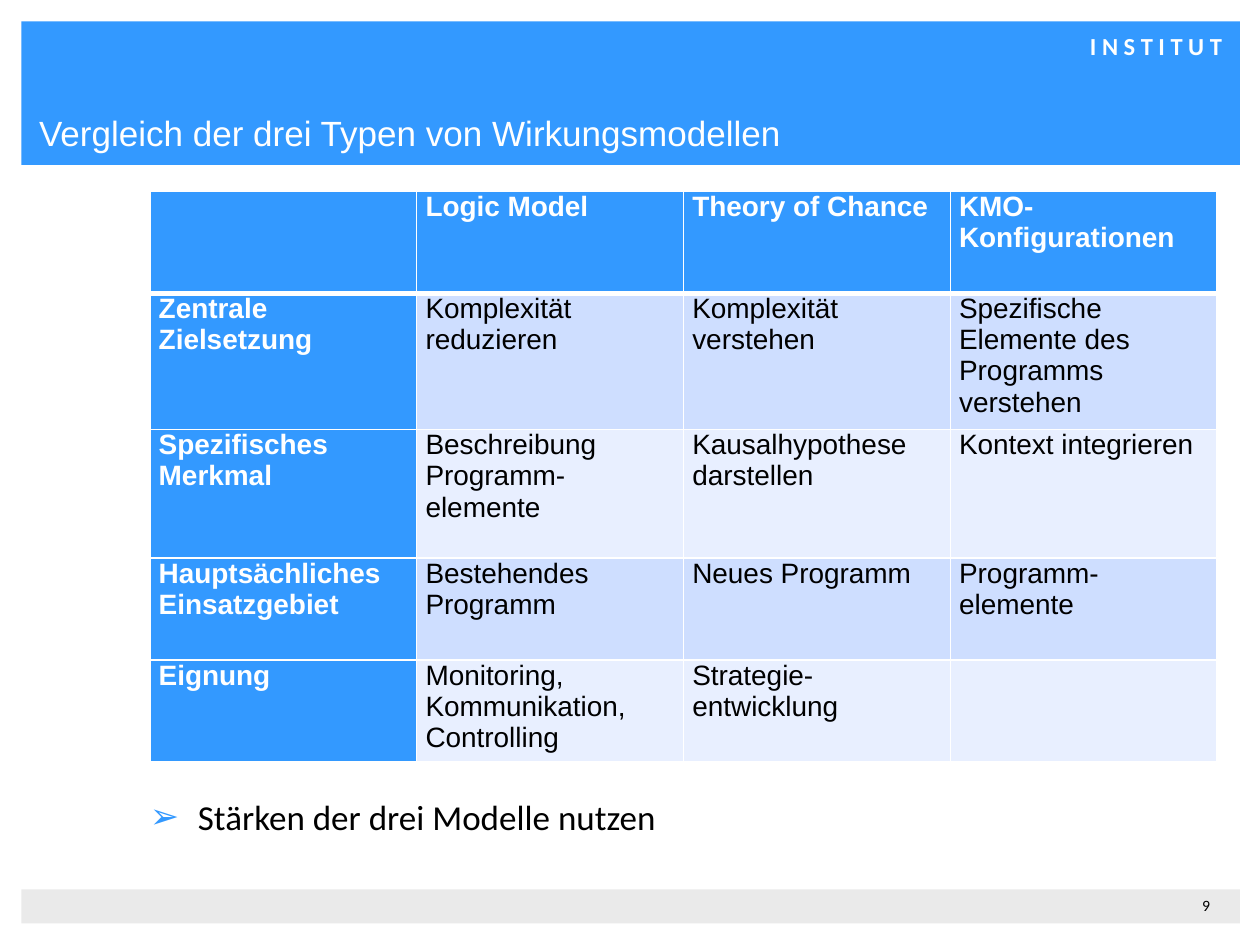
from typing import NamedTuple

from lxml import etree
from pptx import Presentation
from pptx import util as u
from pptx.dml.color import RGBColor
from pptx.enum import shapes, text
from pptx.oxml.ns import qn

PX = 9144  # EMU per px, 100 px to the inch

BLUE = RGBColor(0x33, 0x99, 0xFF)
PALE_BLUE = RGBColor(0xCE, 0xDE, 0xFF)
PALEST_BLUE = RGBColor(0xE8, 0xEF, 0xFF)
GREY = RGBColor(0xEA, 0xEA, 0xEA)
WHITE = RGBColor(0xFF, 0xFF, 0xFF)
BLACK = RGBColor(0x00, 0x00, 0x00)


class Box(NamedTuple):
    left: int
    top: int
    width: int
    height: int

    def emu(self) -> list[int]:
        return [value * PX for value in self]


class Style(NamedTuple):
    size: int
    font: str
    color: RGBColor
    bold: bool = False


class Band(NamedTuple):
    box: Box
    color: RGBColor


class Label(NamedTuple):
    box: Box
    wording: str
    style: Style
    align: text.PP_ALIGN


BANDS = [
    Band(Box(17, 17, 967, 114), BLUE),
    Band(Box(17, 706, 967, 27), GREY),
]
LABELS = [
    Label(Box(728, 25, 242, 24), "I N S T I T U T",
          Style(14, "Calibri", WHITE, True), text.PP_ALIGN.RIGHT),
    Label(Box(954, 711, 33, 26), "9", Style(9, "Calibri", BLACK), text.PP_ALIGN.LEFT),
]
TABLE_BOX = Box(119, 152, 847, 453)
ROW_HEIGHTS = [81, 108, 102, 81, 81]
ROWS = [
    ["", "Logic Model", "Theory of Chance", "KMO-Konfigurationen"],
    ["Zentrale Zielsetzung", "Komplexität reduzieren", "Komplexität verstehen",
     "Spezifische Elemente des Programms verstehen"],
    ["Spezifisches Merkmal", "Beschreibung Programm-elemente",
     "Kausalhypothese darstellen", "Kontext integrieren"],
    ["Hauptsächliches\nEinsatzgebiet", "Bestehendes Programm", "Neues Programm",
     "Programm-elemente"],
    ["Eignung", "Monitoring, Kommunikation, Controlling", "Strategie-entwicklung", ""],
]
HEADING = Style(16, "Arial", WHITE, True)
ENTRY = Style(16, "Arial", BLACK)


def place(shape, box: Box) -> None:
    shape.left, shape.top, shape.width, shape.height = box.emu()


def write(frame, wording: str, style: Style) -> None:
    frame.text = wording
    for paragraph in frame.paragraphs:
        for run in paragraph.runs:
            run.font.size = u.Pt(style.size)
            run.font.name = style.font
            run.font.bold = style.bold
            run.font.color.rgb = style.color


def clear_insets(frame) -> None:
    frame.margin_left = frame.margin_top = frame.margin_right = frame.margin_bottom = 0


def add_band(slide, band: Band) -> None:
    """Draw a plain bar behind the title."""
    shape = slide.shapes.add_shape(shapes.MSO_SHAPE.RECTANGLE, *band.box.emu())
    shape.shadow.inherit = False
    shape.fill.solid()
    shape.fill.fore_color.rgb = band.color
    shape.line.fill.background()
    slide.shapes.title.element.addprevious(shape.element)


def add_label(slide, label: Label) -> None:
    frame = slide.shapes.add_textbox(*label.box.emu()).text_frame
    frame.word_wrap = True
    clear_insets(frame)
    write(frame, label.wording, label.style)
    frame.paragraphs[0].alignment = label.align


def set_title(slide, wording: str) -> None:
    title = slide.shapes.title
    place(title, Box(31, 28, 776, 94))
    frame = title.text_frame
    frame.auto_size = text.MSO_AUTO_SIZE.NONE
    frame.vertical_anchor = text.MSO_ANCHOR.BOTTOM
    clear_insets(frame)
    write(frame, wording, Style(20, "Arial", WHITE))
    frame.paragraphs[0].alignment = text.PP_ALIGN.LEFT


def set_conclusion(slide, wording: str) -> None:
    body = slide.placeholders[1]
    place(body, Box(59, 626, 847, 44))
    frame = body.text_frame
    frame.auto_size = text.MSO_AUTO_SIZE.NONE
    write(frame, wording, Style(20, "Calibri", BLACK))
    paragraph = frame.paragraphs[0]
    paragraph.level = 1
    paragraph.space_before = u.Pt(0)
    properties = paragraph._p.get_or_add_pPr()
    properties.set("marL", str(88 * PX))
    properties.set("indent", str(-38 * PX))
    bullet_color = etree.SubElement(properties, qn("a:buClr"))
    etree.SubElement(bullet_color, qn("a:srgbClr"), val=str(BLUE))
    etree.SubElement(properties, qn("a:buChar"), char="➢")


def set_borders(cell, top: int, bottom: int) -> None:
    """Give the cell white borders; widths in points, before any fill is set."""
    properties = cell._tc.get_or_add_tcPr()
    for side, width in (("L", 1), ("R", 1), ("T", top), ("B", bottom)):
        line = etree.SubElement(properties, qn(f"a:ln{side}"), w=str(u.Pt(width)))
        fill = etree.SubElement(line, qn("a:solidFill"))
        etree.SubElement(fill, qn("a:srgbClr"), val=str(WHITE))


def add_comparison(slide) -> None:
    table = slide.shapes.add_table(len(ROWS), len(ROWS[0]), *TABLE_BOX.emu()).table
    table.first_col = True
    for row, height in zip(table.rows, ROW_HEIGHTS):
        row.height = height * PX
    for row_index, row in enumerate(ROWS):
        stripe = PALE_BLUE if row_index % 2 else PALEST_BLUE
        for column_index, wording in enumerate(row):
            is_heading = row_index == 0 or column_index == 0
            cell = table.cell(row_index, column_index)
            set_borders(cell, top=3 if row_index == 1 else 1,
                        bottom=3 if row_index == 0 else 1)
            cell.fill.solid()
            cell.fill.fore_color.rgb = BLUE if is_heading else stripe
            cell.margin_left = cell.margin_right = 7 * PX
            cell.margin_top = cell.margin_bottom = 0
            write(cell.text_frame, wording, HEADING if is_heading else ENTRY)
            if wording:
                cell.text_frame.paragraphs[0].space_before = u.Pt(12)


def main() -> None:
    presentation = Presentation()
    presentation.slide_width, presentation.slide_height = 1000 * PX, 750 * PX
    slide = presentation.slides.add_slide(presentation.slide_layouts[1])
    for band in BANDS:
        add_band(slide, band)
    for label in LABELS:
        add_label(slide, label)
    set_title(slide, "Vergleich der drei Typen von Wirkungsmodellen")
    add_comparison(slide)
    set_conclusion(slide, "Stärken der drei Modelle nutzen")
    presentation.save("out.pptx")


if __name__ == "__main__":
    main()
